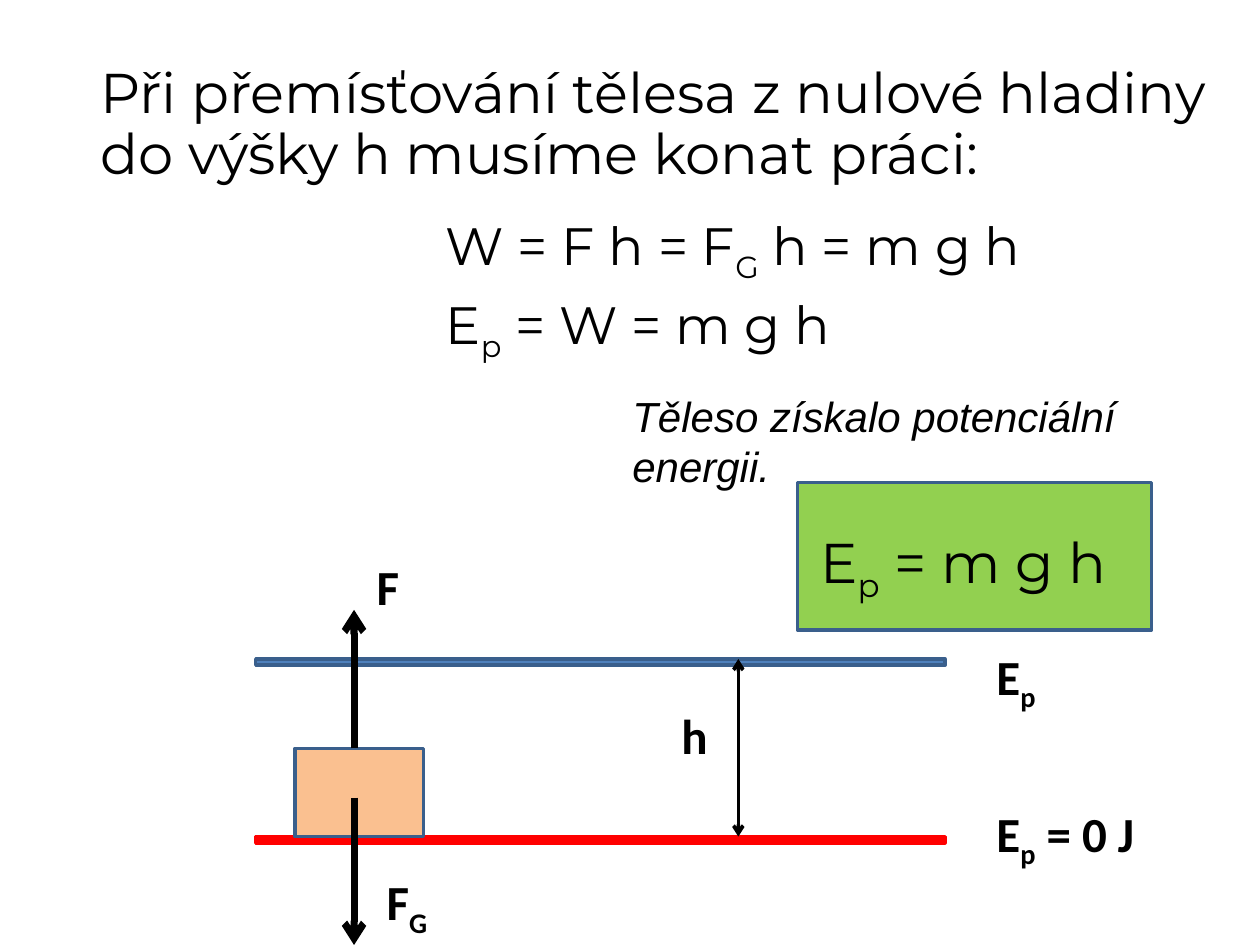
from dataclasses import dataclass

from lxml import etree
from pptx import Presentation
from pptx.dml.color import RGBColor
from pptx.enum import shapes
from pptx.oxml.ns import qn
from pptx.util import Inches, Pt


@dataclass(frozen=True)
class Theme:
    ink: RGBColor = RGBColor(0, 0, 0)
    outline: RGBColor = RGBColor.from_string("3A5F8C")
    level: RGBColor = RGBColor.from_string("4F81BD")
    ground: RGBColor = RGBColor.from_string("FF0000")
    body: RGBColor = RGBColor.from_string("FAC090")
    result: RGBColor = RGBColor.from_string("92D050")
    main_font: str = "Montserrat"
    label_font: str = "Calibri"
    note_font: str = "Arial"
    title: int = 32
    formula: int = 30
    label: int = 28
    note: int = 24


THEME = Theme()


def add_text(page, box, content, size, font=THEME.main_font, bold=False, italic=False):
    """Place one paragraph; an underscore lowers the letter after it."""
    frame = page.shapes.add_textbox(*map(Inches, box)).text_frame
    frame.word_wrap = True
    para = frame.paragraphs[0]
    first, *others = content.split("_")
    pieces = [(first, False)]
    for piece in others:
        pieces += [(piece[0], True), (piece[1:], False)]
    for words, lowered in pieces:
        if not words:
            continue
        span = para.add_run()
        span.text = words
        span.font.name = font
        span.font.size = Pt(size)
        span.font.bold = bold
        span.font.italic = italic
        span.font.color.rgb = THEME.ink
        if lowered:
            span.font._element.set("baseline", "-25000")
    return para


def add_label(page, left, top, content, width=0.86):
    add_text(page, (left, top, width, 0.57), content, THEME.label, THEME.label_font, bold=True)


def add_block(page, box, fill, outline=THEME.outline):
    block = page.shapes.add_shape(shapes.MSO_SHAPE.RECTANGLE, *map(Inches, box))
    block.shadow.inherit = False
    block.fill.solid()
    block.fill.fore_color.rgb = fill
    block.line.color.rgb = outline
    block.line.width = Pt(2)


def add_arrow(page, x, start, end, width, ends=("tailEnd",)):
    """Draw a vertical arrow at x."""
    arrow = page.shapes.add_connector(
        shapes.MSO_CONNECTOR.STRAIGHT, *map(Inches, (x, start, x, end)))
    arrow.line.color.rgb = THEME.ink
    arrow.line.width = Pt(width)
    for end_name in ends:
        etree.SubElement(arrow.line._get_or_add_ln(), qn("a:" + end_name), type="arrow")
    etree.SubElement(arrow._element.spPr, qn("a:effectLst"))


def add_derivation(page, left, top):
    title = add_text(page, (left, top, 9, 1.56),
                     "Při přemísťování tělesa z nulové hladiny do výšky h musíme konat práci:",
                     THEME.title)
    title.line_spacing = 0.9
    formulas = ("W = F h = F_G h = m g h", "E_p = W = m g h")
    for row, formula in enumerate(formulas):
        add_text(page, (left + 2.74, top + 1.17 + 0.63 * row, 6.02, 0.7),
                 formula, THEME.formula)
    add_text(page, (left + 4.22, top + 2.58, 4.45, 1.25),
             "Těleso získalo potenciální energii.", THEME.note, THEME.note_font, italic=True)


def add_result(page, left, top, width, height):
    add_block(page, (left, top, width, height), THEME.result)
    add_text(page, (left + 0.08, top + 0.31, width, height - 0.31), "E_p = m g h", THEME.title)


def add_levels(page, left, top, width, height):
    """Draw the raised level, the zero level and the height between them."""
    bottom = top + height
    label_left = left + width + 0.31
    add_block(page, (left, top, width, 0.05), THEME.level)
    add_block(page, (left, bottom, width, 0.05), THEME.ground, THEME.ground)
    add_label(page, label_left, top - 0.15, "E_p", 2.19)
    add_label(page, label_left, bottom - 0.31, "E_p = 0 J", 2.19)
    add_arrow(page, left + 3.83, top, bottom, 2, ("headEnd", "tailEnd"))
    add_label(page, left + 3.28, top + 0.32, "h")


def add_lifted_body(page, left, top, width, height):
    """Draw the body with the lifting force and its weight."""
    axis = left + 0.47
    add_block(page, (left, top, width, height), THEME.body)
    add_arrow(page, axis, top + 0.39, 7.5, 4)
    add_label(page, axis + 0.16, top + 0.93, "F_G")
    add_arrow(page, axis, top, top - 1.1, 4)
    add_label(page, axis + 0.08, top - 1.57, "F")


def main():
    deck = Presentation()
    deck.slide_width, deck.slide_height = Inches(10), Inches(7.5)
    page = deck.slides.add_slide(deck.slide_layouts[6])
    add_result(page, 6.33, 3.83, 2.81, 1.17)
    add_derivation(page, 0.7, 0.47)
    add_levels(page, 2.03, 5.23, 5.47, 1.41)
    add_lifted_body(page, 2.34, 5.94, 1.02, 0.7)
    deck.save("out.pptx")


if __name__ == "__main__":
    main()
